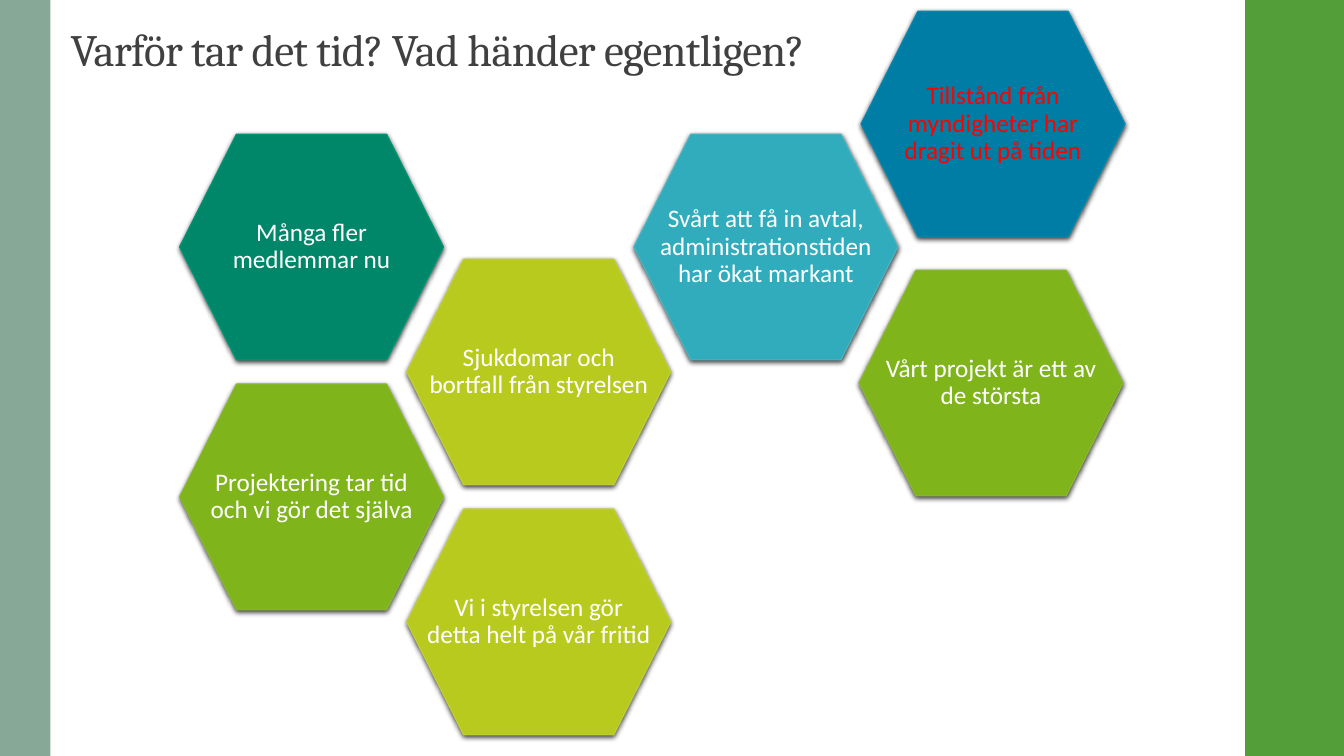
import dataclasses

import pptx
import pptx.dml.color
import pptx.enum.shapes
import pptx.enum.text
import pptx.oxml
import pptx.oxml.ns
import pptx.util

Inches = pptx.util.Inches
Pt = pptx.util.Pt


@dataclasses.dataclass(frozen=True)
class Theme:
    """Colours, fonts and type sizes of the slide."""
    left_band: str = "87A896"
    right_band: str = "549E39"
    title: str = "404040"
    white: str = "FFFFFF"
    alert: str = "FF0000"
    shadow: str = "000000"
    green: tuple = ("7FB41B", "8AB833")
    lime: tuple = ("B9CA1F", "C0CF3A")
    teal: tuple = ("008669", "029676")
    aqua: tuple = ("31ACBD", "4AB5C4")
    blue: tuple = ("007DA4", "0989B1")
    title_font: str = "Cambria"
    body_font: str = "Calibri"
    title_size: int = 32
    body_size: int = 18


THEME = Theme()
REASONS = [
    ("Projektering tar tid och vi gör det själva", 0, 2, THEME.green, {}),
    ("Sjukdomar och bortfall från styrelsen", 1, 1, THEME.lime, {}),
    ("Många fler medlemmar nu", 0, 0, THEME.teal, {}),
    ("Svårt att få in avtal, administrationstiden har ökat markant", 2, 0, THEME.aqua, {}),
    ("Tillstånd från myndigheter har dragit ut på tiden", 3, -1, THEME.blue,
     {"nudge": (0, 0.02), "color": THEME.alert}),
    ("Vårt projekt är ett av de största", 3, 1, THEME.green, {"nudge": (-0.02, 0.11)}),
    ("Vi i styrelsen gör detta helt på vår fritid", 1, 3, THEME.lime, {}),
]


def rgb(code):
    """Return the colour for a hex code."""
    return pptx.dml.color.RGBColor.from_string(code)


def write(shape, text, *, font, size, color, align, insets, spacing=0):
    """Write one formatted paragraph, vertically centred, into a shape."""
    frame = shape.text_frame
    frame.word_wrap = True
    frame.auto_size = pptx.enum.text.MSO_AUTO_SIZE.NONE
    frame.vertical_anchor = pptx.enum.text.MSO_ANCHOR.MIDDLE
    frame.margin_left = frame.margin_right = Inches(insets[0])
    frame.margin_top = frame.margin_bottom = Inches(insets[1])
    paragraph = frame.paragraphs[0]
    paragraph.alignment = align
    paragraph.line_spacing = 0.9
    run = paragraph.add_run()
    run.text = text
    run.font.name = font
    run.font.size = Pt(size)
    run.font.color.rgb = rgb(color)
    if spacing:
        run.font._element.set("spc", str(int(spacing * 100)))


def add_band(slide, left, width, color):
    """Draw a full-height side band."""
    band = slide.shapes.add_shape(pptx.enum.shapes.MSO_SHAPE.RECTANGLE,
                                  Inches(left), 0, Inches(width), Inches(7.5))
    band.shadow.inherit = False
    band.fill.solid()
    band.fill.fore_color.rgb = rgb(color)
    band.line.fill.background()


def add_title(slide, left, top, width, height):
    """Place and fill the title placeholder."""
    title = slide.shapes.title
    title.left, title.top = Inches(left), Inches(top)
    title.width, title.height = Inches(width), Inches(height)
    write(title, "Varför tar det tid? Vad händer egentligen?", font=THEME.title_font,
          size=THEME.title_size, color=THEME.title, align=pptx.enum.text.PP_ALIGN.LEFT,
          insets=(0.1, 0.05), spacing=-0.5)


def add_shadow(shape):
    """Give a shape a soft shadow straight below it."""
    shape.shadow.inherit = False
    effects = shape._element.spPr.find(pptx.oxml.ns.qn("a:effectLst"))
    effects.append(pptx.oxml.parse_xml(
        f'<a:outerShdw {pptx.oxml.ns.nsdecls("a")} blurRad="{Pt(4)}" dist="{Pt(1.2)}" '
        f'dir="5400000" algn="ctr" rotWithShape="0"><a:srgbClr val="{THEME.shadow}">'
        '<a:alpha val="75000"/></a:srgbClr></a:outerShdw>'))


def add_hexagon(slide, left, top, width, height, text, colors, color):
    """Draw one reason as a hexagon filling its box."""
    corner = 0.565
    middle, right, bottom = top + height / 2, left + width, top + height
    points = [(left, middle), (left + corner, top), (right - corner, top),
              (right, middle), (right - corner, bottom), (left + corner, bottom)]
    start, *others = [(Inches(x), Inches(y)) for x, y in points]
    builder = slide.shapes.build_freeform(*start)
    builder.add_line_segments(others, close=True)
    hexagon = builder.convert_to_shape()
    fill, line = colors
    hexagon.fill.solid()
    hexagon.fill.fore_color.rgb = rgb(fill)
    hexagon.line.color.rgb = rgb(line)
    hexagon.line.width = Pt(0.75)
    add_shadow(hexagon)
    write(hexagon, text, font=THEME.body_font, size=THEME.body_size, color=color,
          align=pptx.enum.text.PP_ALIGN.CENTER, insets=(0.19, 0.18))


def add_honeycomb(slide, left, top):
    """Lay out the reasons on a staggered grid from its top-left cell."""
    column_step, row_step = 2.253, 1.24
    for text, column, row, colors, extras in REASONS:
        shift_x, shift_y = extras.get("nudge", (0, 0))
        add_hexagon(slide, left + column * column_step + shift_x,
                    top + row * row_step + shift_y, 2.62, 2.24, text, colors,
                    extras.get("color", THEME.white))


def main():
    """Build and save the presentation."""
    deck = pptx.Presentation()
    deck.slide_width, deck.slide_height = Inches(13.33), Inches(7.5)
    slide = deck.slides.add_slide(deck.slide_layouts[5])
    add_band(slide, 12.35, 0.98, THEME.right_band)
    add_band(slide, 0, 0.5, THEME.left_band)
    add_title(slide, 0.6, 0.01, 8.17, 1.01)
    add_honeycomb(slide, 1.78, 1.33)
    deck.save("out.pptx")


if __name__ == "__main__":
    main()
